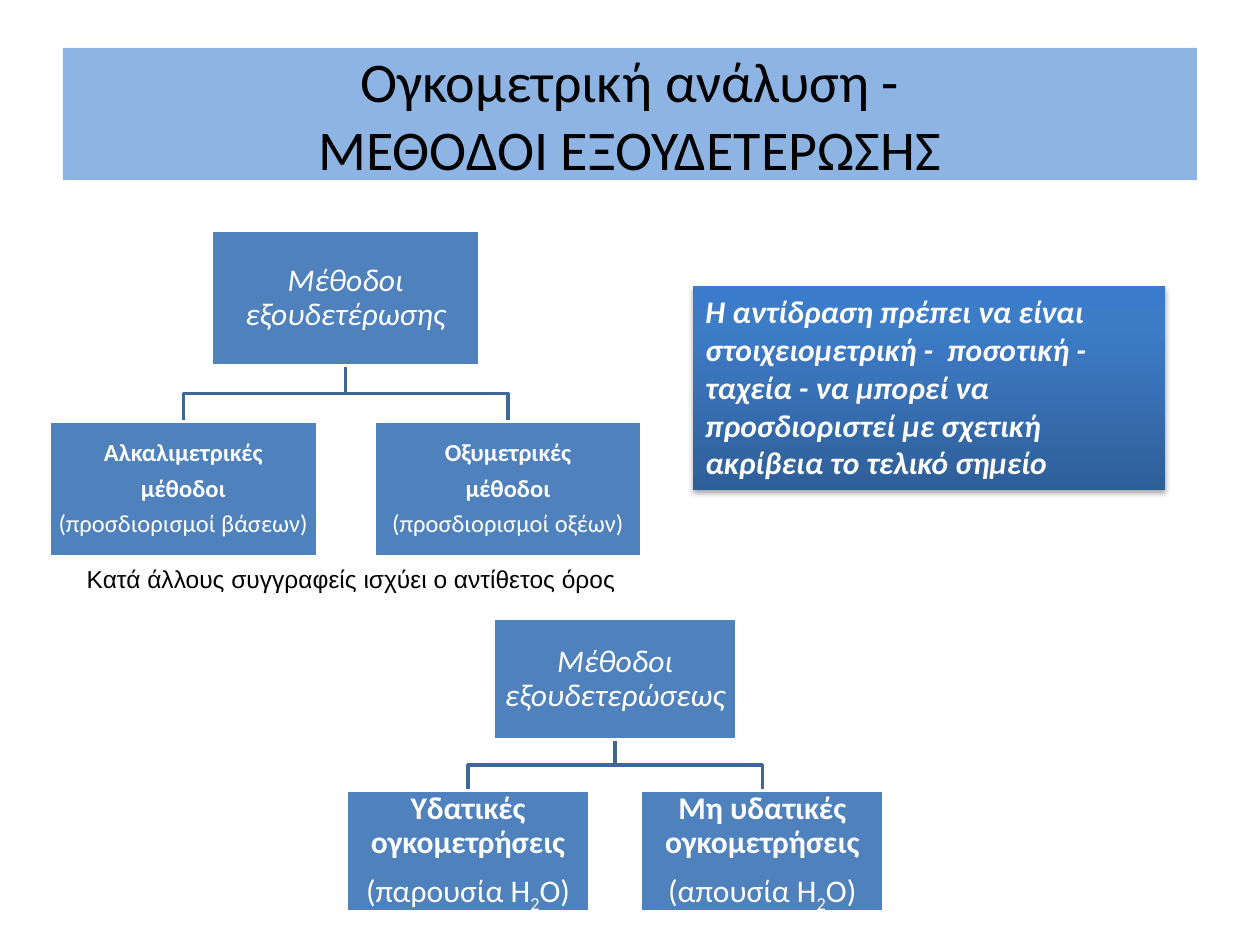
import copy

import pptx
import pptx.dml.color
import pptx.enum.shapes
import pptx.enum.text
import pptx.oxml
import pptx.util
from pptx.util import Inches, Pt

RGBColor = pptx.dml.color.RGBColor
ALIGN = pptx.enum.text.PP_ALIGN
ANCHOR = pptx.enum.text.MSO_ANCHOR
AUTO_SIZE = pptx.enum.text.MSO_AUTO_SIZE

WHITE = RGBColor(0xFF, 0xFF, 0xFF)
BLACK = RGBColor(0x00, 0x00, 0x00)
BOX_BLUE = RGBColor(0x4F, 0x81, 0xBD)
BRANCH_BLUE = RGBColor(0x3F, 0x67, 0x97)
TITLE_BLUE = RGBColor(0x8E, 0xB4, 0xE3)
NOTE_GRADIENT = [
    (0, RGBColor(0x2F, 0x5F, 0x99)),
    (0.8, RGBColor(0x3D, 0x7C, 0xC7)),
    (1, RGBColor(0x3A, 0x7C, 0xCB)),
]
NOTE_SHADOW = (
    '<a:effectLst xmlns:a="http://schemas.openxmlformats.org/drawingml/2006/main">'
    '<a:outerShdw blurRad="40000" dist="23000" dir="5400000" rotWithShape="0">'
    '<a:srgbClr val="000000"><a:alpha val="35000"/></a:srgbClr>'
    '</a:outerShdw></a:effectLst>'
)


def write(frame, paragraphs, size=18, font="Calibri", color=WHITE, bold=False,
          italic=False, align=ALIGN.LEFT, line_spacing=None, space_after=0):
    """Fill a frame; a paragraph is a list of (text, changes) runs.

    Changes may hold bold and baseline (percent); a newline breaks the line.
    """
    for index, runs in enumerate(paragraphs):
        paragraph = frame.paragraphs[0] if index == 0 else frame.add_paragraph()
        paragraph.alignment = align
        paragraph.line_spacing = line_spacing
        paragraph.space_after = Pt(space_after)
        for text, changes in runs:
            for row, line in enumerate(text.split("\n")):
                if row:
                    paragraph.add_line_break()
                run = paragraph.add_run()
                run.text = line
                run.font.size = Pt(size)
                run.font.name = font
                run.font.color.rgb = color
                run.font.bold = changes.get("bold", bold)
                run.font.italic = italic
                if "baseline" in changes:
                    baseline = str(changes["baseline"] * 1000)
                    run._r.get_or_add_rPr().set("baseline", baseline)


class MethodSlide:
    GAP_RATIO = 0.21  # gap between boxes, as a share of box width
    BOX_INSET = Inches(0.01)

    def __init__(self, slide):
        self.shapes = slide.shapes

    def rectangle(self, left, top, width, height, fill=None, outline=None):
        shape = self.shapes.add_shape(
            pptx.enum.shapes.MSO_SHAPE.RECTANGLE,
            Inches(left), Inches(top), Inches(width), Inches(height))
        shape.shadow.inherit = False
        if fill is not None:
            shape.fill.solid()
            shape.fill.fore_color.rgb = fill
        if outline is None:
            shape.line.fill.background()
        else:
            shape.line.color.rgb = outline
            shape.line.width = Pt(2)
        shape.text_frame.word_wrap = True
        shape.text_frame.vertical_anchor = ANCHOR.MIDDLE
        return shape

    def title(self, text, left, top, width, height):
        band = self.rectangle(left, top, width, height, TITLE_BLUE)
        write(band.text_frame, [[(text, {})]], size=32, color=BLACK,
              align=ALIGN.CENTER)

    def box(self, paragraphs, left, top, width, height, size=18, **style):
        frame = self.rectangle(left, top, width, height, BOX_BLUE, WHITE).text_frame
        frame.margin_left = frame.margin_right = self.BOX_INSET
        frame.margin_top = frame.margin_bottom = self.BOX_INSET
        write(frame, paragraphs, size=size, align=ALIGN.CENTER,
              line_spacing=0.9, space_after=0.35 * size, **style)

    def branch(self, start_x, start_y, end_x, end_y):
        middle_y = (start_y + end_y) / 2
        builder = self.shapes.build_freeform(Inches(start_x), Inches(start_y))
        corners = [(start_x, middle_y), (end_x, middle_y), (end_x, end_y)]
        builder.add_line_segments(
            [(Inches(x), Inches(y)) for x, y in corners], close=False)
        elbow = builder.convert_to_shape()
        elbow.shadow.inherit = False
        elbow.fill.background()
        elbow.line.color.rgb = BRANCH_BLUE
        elbow.line.width = Pt(2)

    def tree(self, root, children, left, top, width, height, child_size):
        """Draw a root box centred over a row of equally spaced children."""
        gap = self.GAP_RATIO * width
        row_width = len(children) * (width + gap) - gap
        root_x = left + row_width / 2
        child_top = top + height + gap
        child_lefts = [left + i * (width + gap) for i in range(len(children))]
        for child_left in reversed(child_lefts):
            self.branch(root_x, top + height, child_left + width / 2, child_top)
        self.box([[(root, {})]], root_x - width / 2, top, width, height, italic=True)
        for paragraphs, child_left in zip(children, child_lefts):
            self.box(paragraphs, child_left, child_top, width, height,
                     size=child_size, bold=True)

    def note(self, text, left, top, width, height):
        panel = self.rectangle(left, top, width, height)
        panel.fill.gradient()
        panel.fill.gradient_angle = 90
        stop_list = panel._element.spPr.find(".//" + pptx.oxml.ns.qn("a:gsLst"))
        stop_list.append(copy.deepcopy(stop_list[-1]))
        for stop, (position, color) in zip(panel.fill.gradient_stops, NOTE_GRADIENT):
            stop.position = position
            stop.color.rgb = color
        effects = panel._element.spPr.find(pptx.oxml.ns.qn("a:effectLst"))
        effects.getparent().replace(effects, pptx.oxml.parse_xml(NOTE_SHADOW))
        panel.text_frame.vertical_anchor = ANCHOR.TOP
        panel.text_frame.auto_size = AUTO_SIZE.SHAPE_TO_FIT_TEXT
        write(panel.text_frame, [[(text, {})]], bold=True, italic=True)

    def remark(self, text, left, top, width, height):
        frame = self.shapes.add_textbox(
            Inches(left), Inches(top), Inches(width), Inches(height)).text_frame
        frame.word_wrap = False
        frame.auto_size = AUTO_SIZE.SHAPE_TO_FIT_TEXT
        write(frame, [[(text, {})]], size=14, font="Arial", color=BLACK)


def titration_kind(name, target):
    return [[(name, {})], [("μέθοδοι", {})],
            [(f"(προσδιορισμοί {target})", {"bold": False})]]


def solvent_kind(name, water):
    plain = {"bold": False}
    return [[(f"{name} ογκομετρήσεις", {})],
            [(f"({water} Η", plain), ("2", {"bold": False, "baseline": -25}),
             ("Ο)", plain)]]


def main():
    presentation = pptx.Presentation()
    presentation.slide_width = Inches(10)
    presentation.slide_height = Inches(7.5)
    page = MethodSlide(presentation.slides.add_slide(presentation.slide_layouts[6]))

    page.tree("Μέθοδοι εξουδετέρωσης",
              [titration_kind("Αλκαλιμετρικές", "βάσεων"),
               titration_kind("Οξυμετρικές", "οξέων")],
              0.39, 1.83, 2.13, 1.07, child_size=14)
    page.tree("Μέθοδοι εξουδετερώσεως",
              [solvent_kind("Υδατικές", "παρουσία"),
               solvent_kind("Μη υδατικές", "απουσία")],
              2.75, 4.91, 1.93, 0.96, child_size=18)
    page.note("Η αντίδραση πρέπει να είναι στοιχειομετρική -  ποσοτική - ταχεία - "
              "να μπορεί να προσδιοριστεί με σχετική ακρίβεια το τελικό σημείο",
              5.5, 2.27, 3.75, 1.62)
    page.remark("Κατά άλλους συγγραφείς ισχύει ο αντίθετος όρος",
                0.59, 4.43, 4.43, 0.34)
    page.title("Ογκομετρική ανάλυση -\nΜΕΘΟΔΟΙ ΕΞΟΥΔΕΤΕΡΩΣΗΣ", 0.5, 0.38, 9, 1.05)

    presentation.save("out.pptx")


if __name__ == "__main__":
    main()
